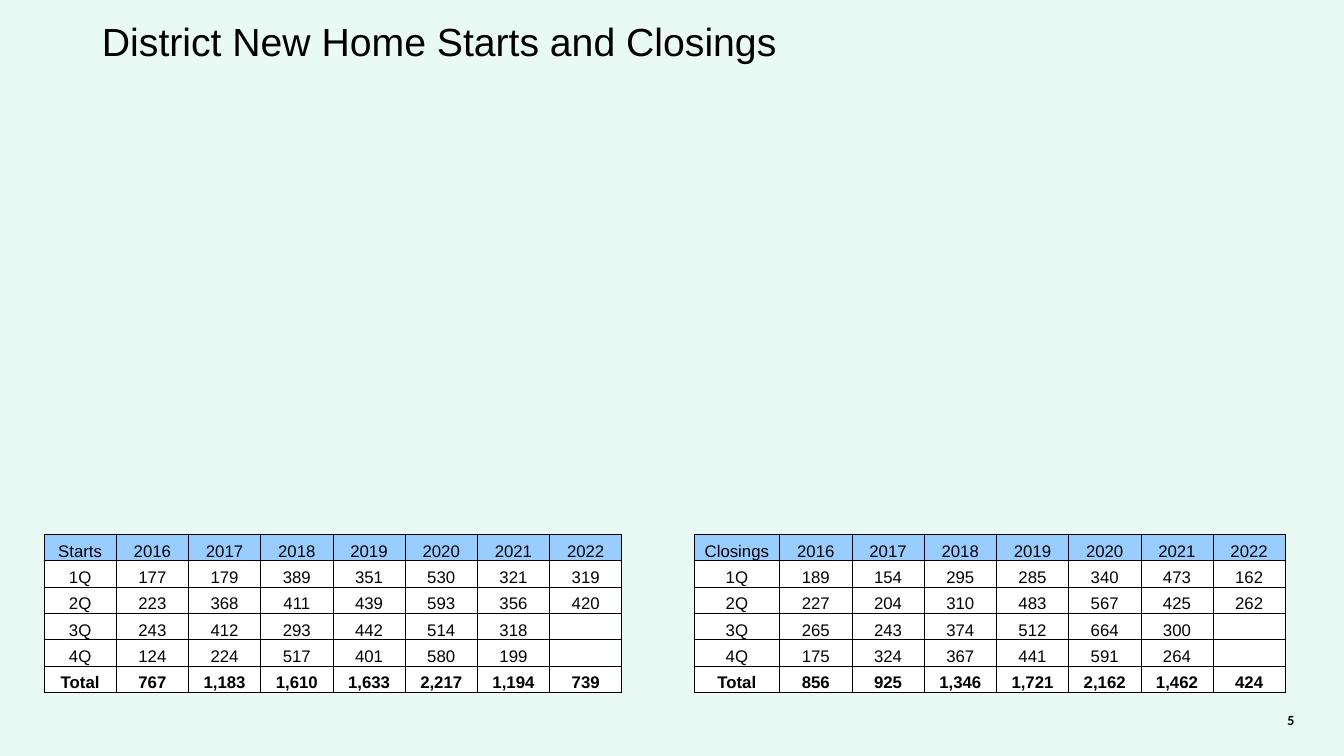
from lxml import etree
from pptx import Presentation
from pptx import util as u
from pptx.dml.color import RGBColor
from pptx.enum import text
from pptx.oxml.ns import qn

# Content
TITLE = "District New Home Starts and Closings"
PAGE_NUMBER = "5"
YEARS = ["2016", "2017", "2018", "2019", "2020", "2021", "2022"]
QUARTERS = ["1Q", "2Q", "3Q", "4Q"]
STARTS = [
    [177, 179, 389, 351, 530, 321, 319],
    [223, 368, 411, 439, 593, 356, 420],
    [243, 412, 293, 442, 514, 318, None],
    [124, 224, 517, 401, 580, 199, None],
]
CLOSINGS = [
    [189, 154, 295, 285, 340, 473, 162],
    [227, 204, 310, 483, 567, 425, 262],
    [265, 243, 374, 512, 664, 300, None],
    [175, 324, 367, 441, 591, 264, None],
]

# Look
COLORS = {"background": "E9FAF4", "header": "99CCFF", "body": "FFFFFF", "ink": "000000"}
TITLE_FONT = {"name": "Arial", "size": u.Pt(28), "bold": False}
CELL_FONT = {"name": "Arial", "size": u.Pt(12), "bold": False}
TOTAL_FONT = {**CELL_FONT, "bold": True}
PAGE_FONT = {"name": "Calibri", "size": u.Pt(10), "bold": True}
ZERO_MARGINS = {"margin_left": 0, "margin_right": 0, "margin_top": 0, "margin_bottom": 0}
CELL_FORMAT = {
    "margin_left": u.Cm(0.03), "margin_right": u.Cm(0.03), "margin_top": u.Cm(0.03),
    "margin_bottom": 0, "vertical_anchor": text.MSO_ANCHOR.BOTTOM,
}
COLUMN_WIDTH, CLOSINGS_WIDTH = u.Cm(1.82), u.Cm(2.16)
BORDER_WIDTH = u.Pt(0.5)


def set_all(target, values):
    for name, value in values.items():
        setattr(target, name, value)


def write(paragraph, words, font, alignment):
    paragraph.alignment = alignment
    run = paragraph.add_run()
    run.text = words
    set_all(run.font, font)
    run.font.color.rgb = RGBColor.from_string(COLORS["ink"])


def place(shape, left, top, width, height):
    set_all(shape, {"left": u.Cm(left), "top": u.Cm(top),
                    "width": u.Cm(width), "height": u.Cm(height)})


def set_borders(cell, visible_sides):
    properties = cell._tc.get_or_add_tcPr()
    for side in "LRTB":
        line = etree.SubElement(properties, qn(f"a:ln{side}"), w=str(BORDER_WIDTH))
        if side in visible_sides:
            fill = etree.SubElement(line, qn("a:solidFill"))
            etree.SubElement(fill, qn("a:srgbClr"), val=COLORS["ink"])
        else:
            etree.SubElement(line, qn("a:noFill"))


def block_rows(label, quarters):
    """Header, quarter rows and column totals as text."""
    rows = [[label, *YEARS]]
    for quarter, values in zip(QUARTERS, quarters):
        rows.append([quarter, *("" if value is None else str(value) for value in values)])
    totals = (sum(value or 0 for value in column) for column in zip(*quarters))
    return rows + [["Total", *(f"{total:,}" for total in totals)]]


# Slide
presentation = Presentation()
presentation.slide_width, presentation.slide_height = u.Cm(33.87), u.Cm(19.05)
slide = presentation.slides.add_slide(presentation.slide_layouts[5])
slide.background.fill.solid()
slide.background.fill.fore_color.rgb = RGBColor.from_string(COLORS["background"])

# Page number
page_box = slide.shapes.add_textbox(u.Cm(25.25), u.Cm(17.63), u.Cm(7.62), u.Cm(1.02))
set_all(page_box.text_frame, {"word_wrap": True, "vertical_anchor": text.MSO_ANCHOR.MIDDLE})
write(page_box.text_frame.paragraphs[0], PAGE_NUMBER, PAGE_FONT, text.PP_ALIGN.RIGHT)

# Title
title = slide.shapes.title
place(title, 2.57, 0.43, 20.29, 1.78)
set_all(title.text_frame, {**ZERO_MARGINS, "word_wrap": True,
                           "auto_size": text.MSO_AUTO_SIZE.NONE,
                           "vertical_anchor": text.MSO_ANCHOR.TOP})
write(title.text_frame.paragraphs[0], TITLE, TITLE_FONT, text.PP_ALIGN.LEFT)

# Table: starts, an open gap column, closings
rows = [starts + [None] + closings for starts, closings in
        zip(block_rows("Starts", STARTS), block_rows("Closings", CLOSINGS))]
gap = len(YEARS) + 1
widths = [COLUMN_WIDTH] * len(rows[0])
widths[gap + 1] = CLOSINGS_WIDTH
table = slide.shapes.add_table(len(rows), len(widths), u.Cm(1.11), u.Cm(13.46),
                               sum(widths), u.Cm(3.99)).table
set_all(table, {"first_row": False, "horz_banding": False})
for column, width in zip(table.columns, widths):
    column.width = width

for row_index, row in enumerate(rows):
    font = TOTAL_FONT if row_index == len(rows) - 1 else CELL_FONT
    fill_name = "header" if row_index == 0 else "body"
    for column_index, words in enumerate(row):
        cell = table.cell(row_index, column_index)
        set_all(cell, CELL_FORMAT)
        set_borders(cell, "LR" if column_index == gap else "LRTB")
        if column_index == gap:
            cell.fill.background()
        else:
            cell.fill.solid()
            cell.fill.fore_color.rgb = RGBColor.from_string(COLORS[fill_name])
        paragraph = cell.text_frame.paragraphs[0]
        if words:
            write(paragraph, words, font, text.PP_ALIGN.CENTER)
        else:  # keep empty cells from stretching the row
            etree.SubElement(paragraph._p, qn("a:endParaRPr"), sz="1200")

presentation.save("out.pptx")
